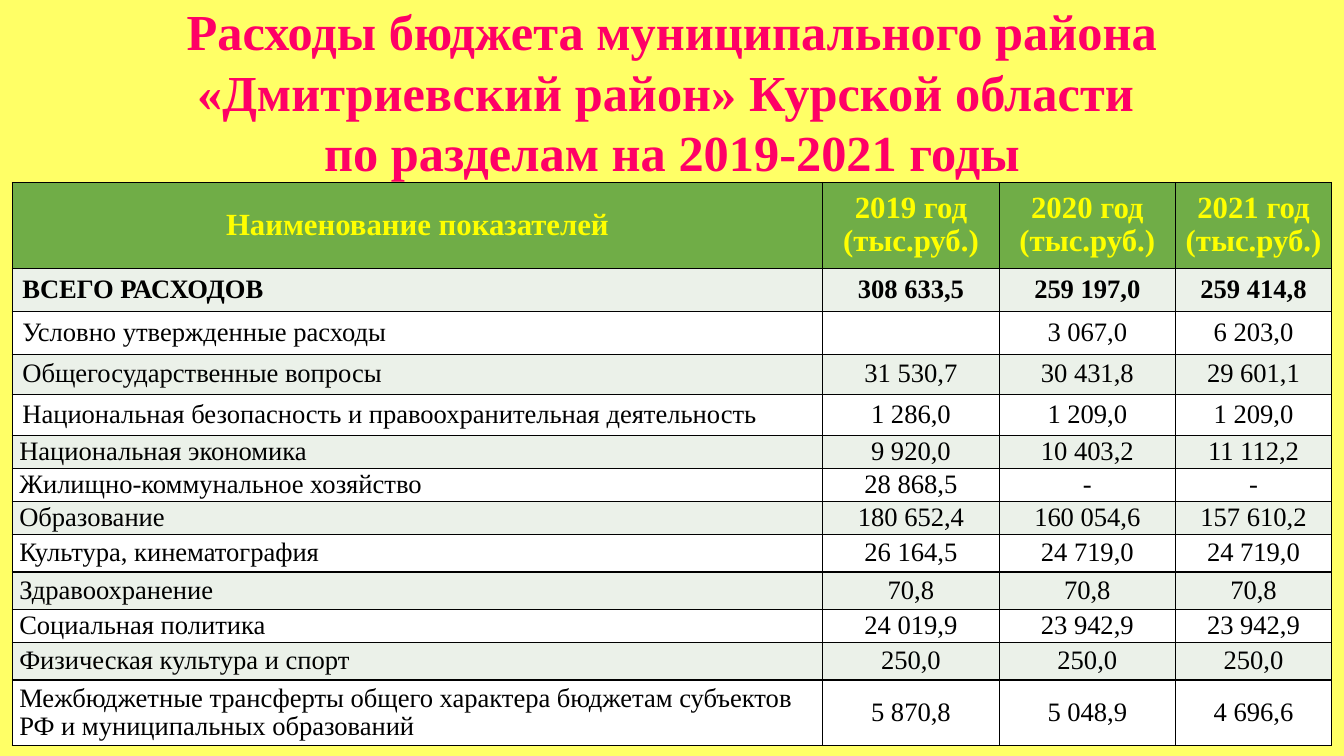
from lxml.etree import SubElement
from pptx import Presentation
from pptx.dml.color import RGBColor
from pptx.enum.text import MSO_ANCHOR, PP_ALIGN
from pptx.oxml.ns import qn
from pptx.util import Pt


def color(value):
    return RGBColor.from_string(value)


def add_text(paragraph, text, size, text_color, bold):
    run = paragraph.add_run()
    run.text = text
    run.font.name = "Times New Roman"
    run.font.size = Pt(size)
    run.font.bold = bold
    run.font.color.rgb = color(text_color)


presentation = Presentation()
presentation.slide_width = Pt(960)
presentation.slide_height = Pt(540)
slide = presentation.slides.add_slide(presentation.slide_layouts[6])
slide.background.fill.solid()
slide.background.fill.fore_color.rgb = color("FFFF66")

# Title
title = slide.shapes.add_textbox(Pt(0), Pt(0), Pt(960), Pt(130.3))
title_frame = title.text_frame
title_frame.word_wrap = True
title_frame.vertical_anchor = MSO_ANCHOR.MIDDLE
paragraph = title_frame.paragraphs[0]
paragraph.alignment = PP_ALIGN.CENTER
paragraph.line_spacing = Pt(43.2)
title_lines = [
    "Расходы бюджета муниципального района «Дмитриевский район» Курской области ",
    "по разделам на 2019-2021 годы",
]
for index, line in enumerate(title_lines):
    if index:
        paragraph.add_line_break()
    add_text(paragraph, line, 36, "FF0066", True)

# Budget rows: height, name, 2019, 2020, 2021
budget = [
    (61.4, "Наименование показателей", "2019 год (тыс.руб.)", "2020 год (тыс.руб.)", "2021 год (тыс.руб.)"),
    (30.7, "ВСЕГО РАСХОДОВ", "308 633,5", "259 197,0", "259 414,8"),
    (30.7, "Условно утвержденные расходы", "", "3 067,0", "6 203,0"),
    (28.4, "Общегосударственные вопросы", "31 530,7", "30 431,8", "29 601,1"),
    (28, "Национальная безопасность и правоохранительная деятельность", "1 286,0", "1 209,0", "1 209,0"),
    (23.6, "Национальная экономика", "9 920,0", "10 403,2", "11 112,2"),
    (23.6, "Жилищно-коммунальное хозяйство", "28 868,5", "-", "-"),
    (23.6, "Образование", "180 652,4", "160 054,6", "157 610,2"),
    (27, "Культура, кинематография", "26 164,5", "24 719,0", "24 719,0"),
    (26.6, "Здравоохранение", "70,8", "70,8", "70,8"),
    (23.6, "Социальная политика", "24 019,9", "23 942,9", "23 942,9"),
    (27, "Физическая культура и спорт", "250,0", "250,0", "250,0"),
    (46.6, "Межбюджетные трансферты общего характера бюджетам субъектов РФ и муниципальных образований",
     "5 870,8", "5 048,9", "4 696,6"),
]
column_widths = [578.7, 126.4, 125.6, 111.9]

# Table
table = slide.shapes.add_table(
    len(budget), len(column_widths), Pt(8.8), Pt(130.3),
    Pt(sum(column_widths)), Pt(sum(row[0] for row in budget))).table
for column, width in zip(table.columns, column_widths):
    column.width = Pt(width)

for row_index, (height, *texts) in enumerate(budget):
    table.rows[row_index].height = Pt(height)
    header = row_index == 0
    if header:
        fill_color = "70AD47"
    else:
        fill_color = "EBF1E9" if row_index % 2 else "FFFFFF"
    for column_index, text in enumerate(texts):
        cell = table.cell(row_index, column_index)
        cell.vertical_anchor = MSO_ANCHOR.MIDDLE
        # The header and the first four names keep the wider default margins
        if not header and (column_index or row_index > 4):
            cell.margin_left = cell.margin_right = Pt(5)
            cell.margin_top = cell.margin_bottom = Pt(0)

        # Borders come before the fill in the cell properties
        properties = cell._tc.get_or_add_tcPr()
        for side in ("a:lnL", "a:lnR", "a:lnT", "a:lnB"):
            border = SubElement(properties, qn(side), w=str(Pt(1)))
            SubElement(SubElement(border, qn("a:solidFill")), qn("a:srgbClr"), val="000000")
        cell.fill.solid()
        cell.fill.fore_color.rgb = color(fill_color)

        paragraph = cell.text_frame.paragraphs[0]
        paragraph.line_spacing = 0.95
        if header or column_index:
            paragraph.alignment = PP_ALIGN.CENTER
        if text:
            add_text(paragraph, text, 22 if header else 19,
                     "FFFF00" if header else "000000", row_index < 2)

presentation.save("out.pptx")
